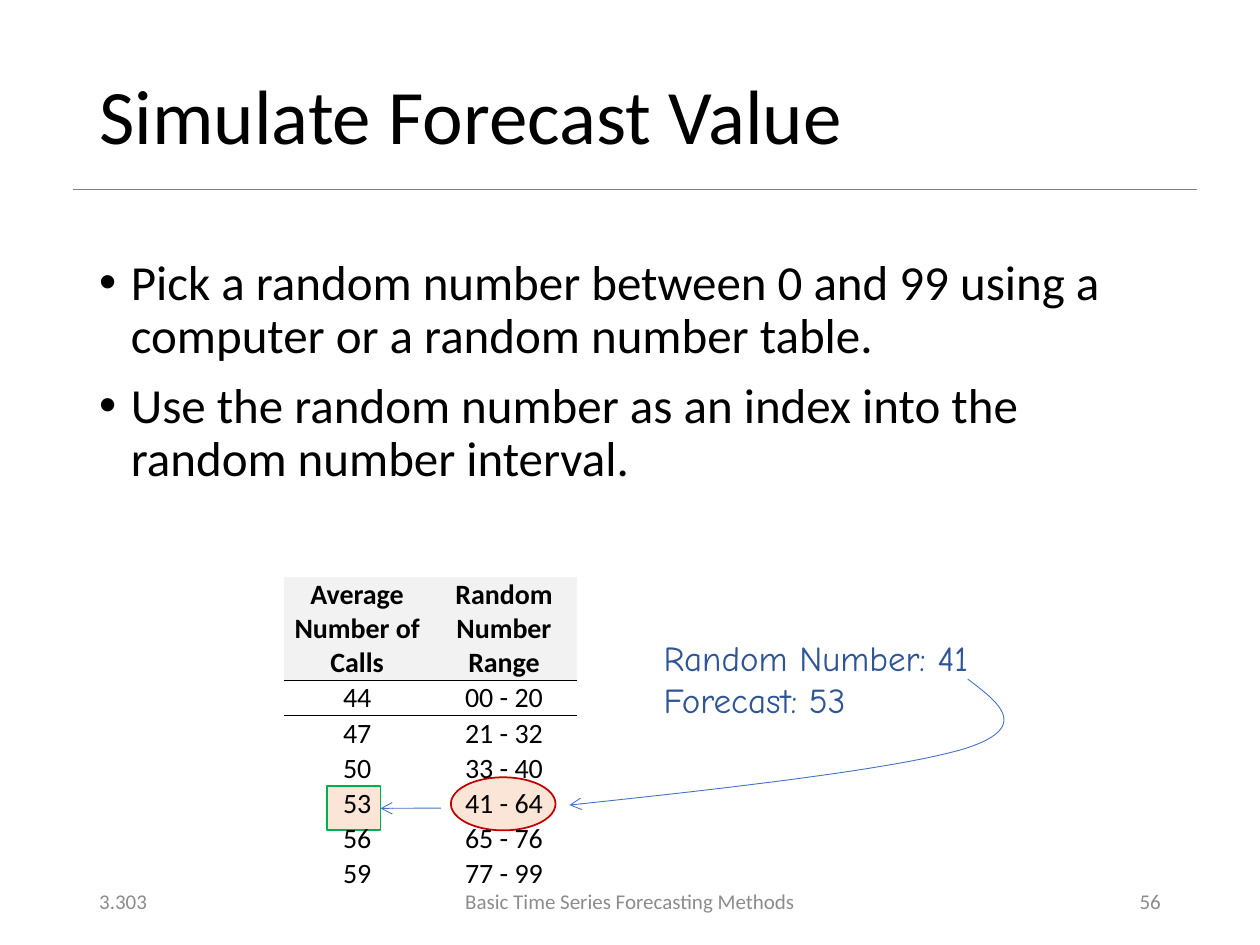
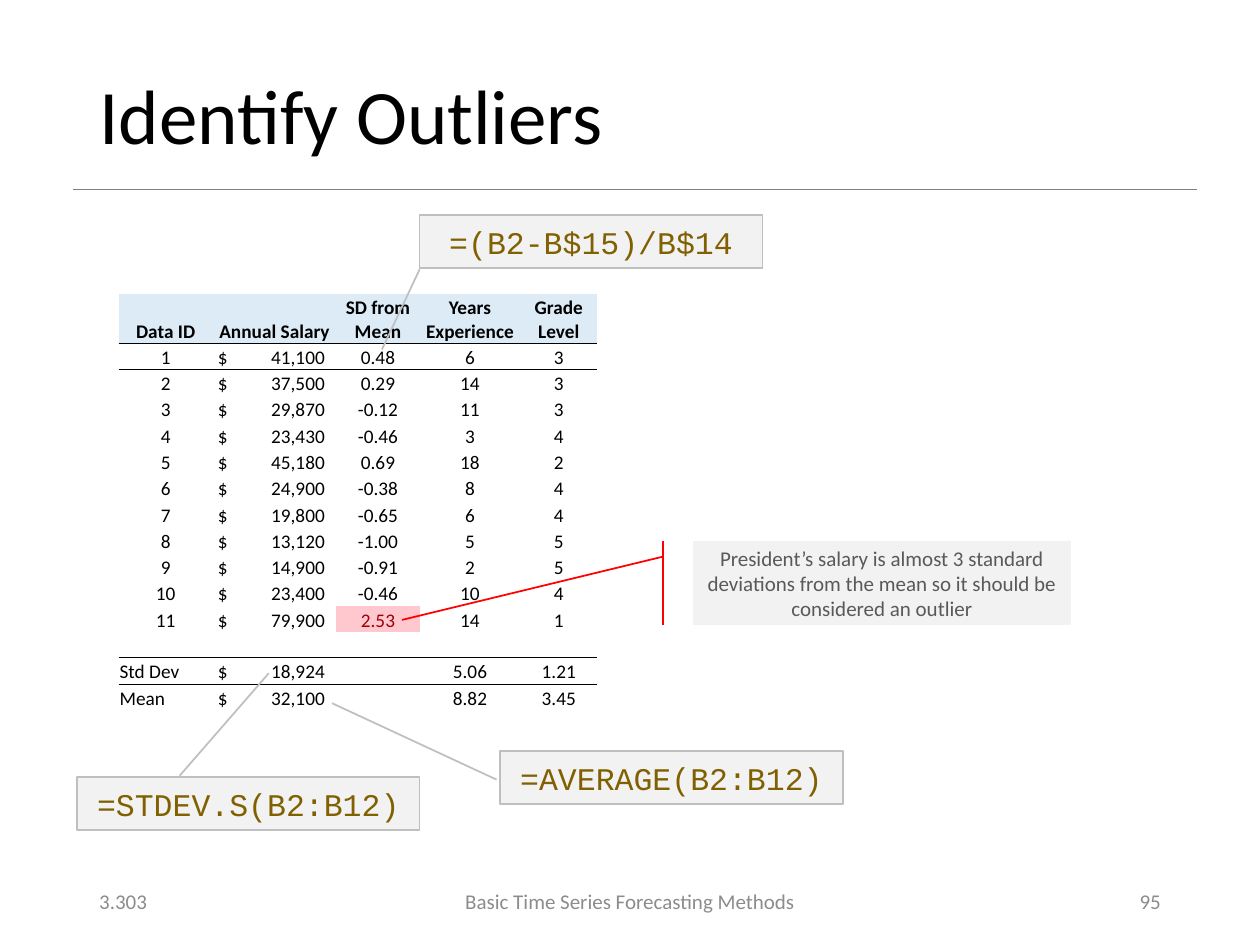
from collections import namedtuple

from lxml import etree
from pptx import Presentation
from pptx.dml.color import RGBColor
from pptx.enum.shapes import MSO_CONNECTOR, MSO_SHAPE
from pptx.enum.text import MSO_ANCHOR, MSO_AUTO_SIZE, PP_ALIGN
from pptx.oxml.ns import qn
from pptx.util import Cm, Pt

LEFT, CENTER, RIGHT = PP_ALIGN.LEFT, PP_ALIGN.CENTER, PP_ALIGN.RIGHT
TOP, MIDDLE, BOTTOM = MSO_ANCHOR.TOP, MSO_ANCHOR.MIDDLE, MSO_ANCHOR.BOTTOM
FIT_SHAPE = MSO_AUTO_SIZE.SHAPE_TO_FIT_TEXT
STRAIGHT = MSO_CONNECTOR.STRAIGHT
RECTANGLE, OVAL = MSO_SHAPE.RECTANGLE, MSO_SHAPE.OVAL
BORDER_CALLOUT = MSO_SHAPE.LINE_CALLOUT_1
ACCENT_CALLOUT = MSO_SHAPE.LINE_CALLOUT_1_ACCENT_BAR

COLORS = {
    "text": "000000", "rule": "808080", "footer": "8C8C8C", "panel": "F2F2F2",
    "peach": "FBE5D6", "green": "00B050", "dark_red": "C00000", "arrow": "4472C4",
    "handwriting": "2F5597", "header_blue": "DDEBF7", "outlier_fill": "FFC7CE",
    "outlier_text": "9C0006", "callout_line": "BFBFBF", "formula": "806000",
    "red": "FF0000", "note": "595959",
}
BODY_FONT, HAND_FONT, CODE_FONT = "Calibri", "Comic Neue", "Courier New"
NO_STYLE = "{2D5ABB26-0587-4C30-8999-92F81FD0307C}"
COURSE, DECK_NAME = "3.303", "Basic Time Series Forecasting Methods"

Box = namedtuple("Box", "left top width height")
TITLE_BOX = Box(1.75, 1.02, 21.9, 2.79)
BODY_BOX = Box(1.75, 5.08, 21.9, 12.09)
FOOTER_BOX = Box(1.75, 17.65, 21.9, 1.02)

CALL_ROWS = [
    ("Average Number of Calls", "Random Number Range"),
    ("44", "00 - 20"), ("47", "21 - 32"), ("50", "33 - 40"),
    ("53", "41 - 64"), ("56", "65 - 76"), ("59", "77 - 99"),
]
SALARY_ROWS = [
    ("Data ID", "Annual Salary", "SD from Mean", "Years Experience", "Grade Level"),
    ("1", "$\t41,100", "0.48", "6", "3"),
    ("2", "$\t37,500", "0.29", "14", "3"),
    ("3", "$\t29,870", "-0.12", "11", "3"),
    ("4", "$\t23,430", "-0.46", "3", "4"),
    ("5", "$\t45,180", "0.69", "18", "2"),
    ("6", "$\t24,900", "-0.38", "8", "4"),
    ("7", "$\t19,800", "-0.65", "6", "4"),
    ("8", "$\t13,120", "-1.00", "5", "5"),
    ("9", "$\t14,900", "-0.91", "2", "5"),
    ("10", "$\t23,400", "-0.46", "10", "4"),
    ("11", "$\t79,900", "2.53", "14", "1"),
    ("", "", "", "", ""),
    ("Std Dev", "$\t18,924", "", "5.06", "1.21"),
    ("Mean", "$\t32,100", "", "8.82", "3.45"),
]


def rgb(name):
    return RGBColor.from_string(COLORS[name])


def inside(box, left, top, width, height):
    return Box(box.left + left, box.top + top, width, height)


def lengths(box):
    return [Cm(value) for value in box]


def add_run(paragraph, text, size, color="text", font=BODY_FONT, bold=False):
    run = paragraph.add_run()
    run.text = text
    run.font.size = Pt(size)
    run.font.name = font
    run.font.bold = bold
    run.font.color.rgb = rgb(color)


def add_text(slide, box, lines, size, color="text", font=BODY_FONT,
             align=LEFT, anchor=TOP, wrap=True):
    frame = slide.shapes.add_textbox(*lengths(box)).text_frame
    frame.word_wrap = wrap
    frame.vertical_anchor = anchor
    for index, line in enumerate(lines):
        paragraph = frame.add_paragraph() if index else frame.paragraphs[0]
        paragraph.alignment = align
        add_run(paragraph, line, size, color, font)
    return frame


def add_panel(slide, kind, box, fill, line):
    shape = slide.shapes.add_shape(kind, *lengths(box))
    shape.shadow.inherit = False
    shape.fill.solid()
    shape.fill.fore_color.rgb = rgb(fill)
    shape.line.color.rgb = rgb(line)
    shape.line.width = Pt(1)
    return shape


def add_line(slide, start, end, color):
    connector = slide.shapes.add_connector(
        STRAIGHT, *[Cm(value) for value in (*start, *end)])
    etree.SubElement(connector._element.spPr, qn("a:effectLst"))
    connector.line.color.rgb = rgb(color)
    connector.line.width = Pt(0.5)
    return connector


def add_arrowhead(shape):
    etree.SubElement(shape.line._get_or_add_ln(), qn("a:tailEnd"), type="arrow")


def add_callout(slide, box, kind, text, adjustments, line, size, color, font):
    shape = add_panel(slide, kind, box, "panel", line)
    for index, value in enumerate(adjustments):
        shape.adjustments[index] = value
    frame = shape.text_frame
    frame.word_wrap = True
    frame.vertical_anchor = MIDDLE
    frame.paragraphs[0].alignment = CENTER
    add_run(frame.paragraphs[0], text, size, color, font)


def add_border(cell, side):
    properties = cell._tc.get_or_add_tcPr()
    line = etree.Element(qn(f"a:{side}"), w=str(Pt(0.5)))
    solid = etree.SubElement(line, qn("a:solidFill"))
    etree.SubElement(solid, qn("a:srgbClr"), val=COLORS["text"])
    properties.insert(0, line)


def set_cell_text(cell, text, size, color, bold, left_aligned, tab):
    paragraph = cell.text_frame.paragraphs[0]
    if not text:
        paragraph._p.get_or_add_endParaRPr().set("sz", str(size * 100))
        return
    has_tab = "\t" in text
    paragraph.alignment = LEFT if has_tab or left_aligned else CENTER
    if has_tab:
        cell.margin_left = Cm(0.1)
        tabs = etree.SubElement(paragraph._p.get_or_add_pPr(), qn("a:tabLst"))
        etree.SubElement(tabs, qn("a:tab"), pos=str(Cm(tab)), algn="r")
    add_run(paragraph, text, size, color, bold=bold)


def add_grid(slide, box, rows, widths, heights, size, margin, header_fill,
             ruled_rows=(0,), left_labels=(), highlights=None, tab=0):
    table = slide.shapes.add_table(len(rows), len(widths), *lengths(box)).table
    table.first_row = table.horz_banding = False
    table._tbl.tblPr.find(qn("a:tableStyleId")).text = NO_STYLE
    for column, width in zip(table.columns, widths):
        column.width = Cm(width)
    for row, height in zip(table.rows, heights):
        row.height = Cm(height)
    for row_index, row in enumerate(rows):
        for column_index, text in enumerate(row):
            cell = table.cell(row_index, column_index)
            cell.vertical_anchor = BOTTOM
            cell.margin_left = cell.margin_right = cell.margin_top = Cm(margin)
            cell.margin_bottom = 0
            if row_index in ruled_rows:
                add_border(cell, "lnB")
            if row_index - 1 in ruled_rows:
                add_border(cell, "lnT")
            fill, color = (highlights or {}).get(
                (row_index, column_index),
                (None if row_index else header_fill, "text"))
            if fill:
                cell.fill.solid()
                cell.fill.fore_color.rgb = rgb(fill)
            else:
                cell.fill.background()
            set_cell_text(cell, text, size, color, row_index == 0,
                          text in left_labels, tab)


def add_footer(slide, box, number):
    side = 5.72
    middle = 8.59
    parts = [
        (0, side, COURSE, LEFT),
        ((box.width - middle) / 2, middle, DECK_NAME, CENTER),
        (box.width - side, side, number, RIGHT),
    ]
    for left, width, text, align in parts:
        add_text(slide, inside(box, left, 0, width, box.height), [text], 12,
                 "footer", align=align, anchor=MIDDLE)


def add_titled_slide(presentation, title, number):
    slide = presentation.slides.add_slide(presentation.slide_layouts[5])
    add_line(slide, (1.47, 3.81), (24.13, 3.81), "rule")
    placeholder = slide.shapes.title
    (placeholder.left, placeholder.top,
     placeholder.width, placeholder.height) = lengths(TITLE_BOX)
    frame = placeholder.text_frame
    frame.vertical_anchor = MIDDLE
    paragraph = frame.paragraphs[0]
    paragraph.alignment = LEFT
    paragraph.line_spacing = 0.9
    add_run(paragraph, title, 44)
    add_footer(slide, FOOTER_BOX, number)
    return slide


def add_bullets(slide, box, lines):
    frame = add_text(slide, box, lines, 28)
    for index, paragraph in enumerate(frame.paragraphs):
        paragraph.line_spacing = 0.9
        if index:
            paragraph.space_before = Pt(10)
        properties = paragraph._p.get_or_add_pPr()
        properties.set("marL", str(Cm(0.64)))
        properties.set("indent", str(-Cm(0.64)))
        etree.SubElement(properties, qn("a:buFont"), typeface="Arial")
        etree.SubElement(properties, qn("a:buChar"), char="•")


def add_call_lookup(slide, box):
    forecast = add_panel(slide, RECTANGLE, inside(box, 0.88, 4.22, 1.07, 0.89),
                         "peach", "green")
    add_panel(slide, OVAL, inside(box, 3.37, 4.04, 2.11, 1.07), "peach", "dark_red")
    add_grid(slide, box, CALL_ROWS, [box.width / 2] * 2, [2.08] + [0.71] * 6,
             16, 0, "panel")
    level = box.top + 4.66
    arrow = add_line(slide, (box.left + 3.17, level), (box.left + 1.95, level), "arrow")
    arrow.end_connect(forecast, 3)
    add_arrowhead(arrow)


def bezier_points(start, first, second, end, steps=24):
    for step in range(1, steps + 1):
        t = step / steps
        weights = ((1 - t) ** 3, 3 * t * (1 - t) ** 2, 3 * t * t * (1 - t), t ** 3)
        yield tuple(sum(weight * value for weight, value in zip(weights, axis))
                    for axis in zip(start, first, second, end))


def add_random_pick(slide, box):
    frame = add_text(slide, inside(box, 1.65, 0, 7.09, 1.96),
                     ["Random Number: 41", "Forecast: 53"], 20,
                     "handwriting", HAND_FONT, wrap=False)
    frame.auto_size = FIT_SHAPE
    start, bend, tip = (8.03, 0.99), (7.98, 2.39), (0, box.height)
    points = [*bezier_points(start, (8.66, 1.47), (9.32, 1.96), bend),
              *bezier_points(bend, (6.66, 2.79), (3.33, 3.18), tip)]
    builder = slide.shapes.build_freeform(
        Cm(box.left + start[0]), Cm(box.top + start[1]))
    builder.add_line_segments(
        [(Cm(box.left + x), Cm(box.top + y)) for x, y in points], close=False)
    curve = builder.convert_to_shape()
    curve.shadow.inherit = False
    curve.fill.background()
    curve.line.color.rgb = rgb("arrow")
    curve.line.width = Pt(0.5)
    add_arrowhead(curve)


def add_salary_table(slide, box):
    add_grid(slide, box, SALARY_ROWS, [1.9, 2.49, 1.68, 2.03, 1.55],
             [1] + [0.53] * 11 + [0.51] + [0.53] * 2, 11, 0.02, "header_blue",
             ruled_rows=(0, 12), left_labels=("Std Dev", "Mean"),
             highlights={(11, 2): ("outlier_fill", "outlier_text")}, tab=2.16)


def add_formula_callouts(slide, box):
    formulas = [
        (6.91, 0, "=(B2-B$15)/B$14", (1.02, 0, 2.53, -0.11)),
        (0, 11.33, "=STDEV.S(B2:B12)", (-0.03, 0.3, -1.96, 0.56)),
        (8.53, 10.8, "=AVERAGE(B2:B12)", (0.54, -0.01, -0.9, -0.49)),
    ]
    for left, top, formula, adjustments in formulas:
        add_callout(slide, inside(box, left, top, 6.91, 1.07), BORDER_CALLOUT,
                    formula, adjustments, "callout_line", 18, "formula", CODE_FONT)


def build_simulation_slide(presentation):
    slide = add_titled_slide(presentation, "Simulate Forecast Value", "56")
    add_bullets(slide, BODY_BOX, [
        "Pick a random number between 0 and 99 using a computer or a random number table.",
        "Use the random number as an index into the random number interval.",
    ])
    add_call_lookup(slide, Box(5.72, 11.63, 5.92, 6.34))
    add_random_pick(slide, Box(11.48, 12.7, 8.9, 3.53))


def build_outlier_slide(presentation):
    slide = add_titled_slide(presentation, "Identify Outliers", "95")
    add_salary_table(slide, Box(2.39, 5.92, 9.65, 8.4))
    add_formula_callouts(slide, Box(1.55, 4.34, 15.44, 12.4))
    add_callout(slide, Box(13.97, 10.9, 7.62, 1.7), ACCENT_CALLOUT,
                "President’s salary is almost 3 standard deviations from the mean "
                "so it should be considered an outlier",
                (0.19, -0.08, 0.94, -0.77), "red", 12, "note", BODY_FONT)


def main():
    presentation = Presentation()
    presentation.slide_width = Cm(25.4)
    presentation.slide_height = Cm(19.05)
    build_simulation_slide(presentation)
    build_outlier_slide(presentation)
    presentation.save("out.pptx")


if __name__ == "__main__":
    main()
